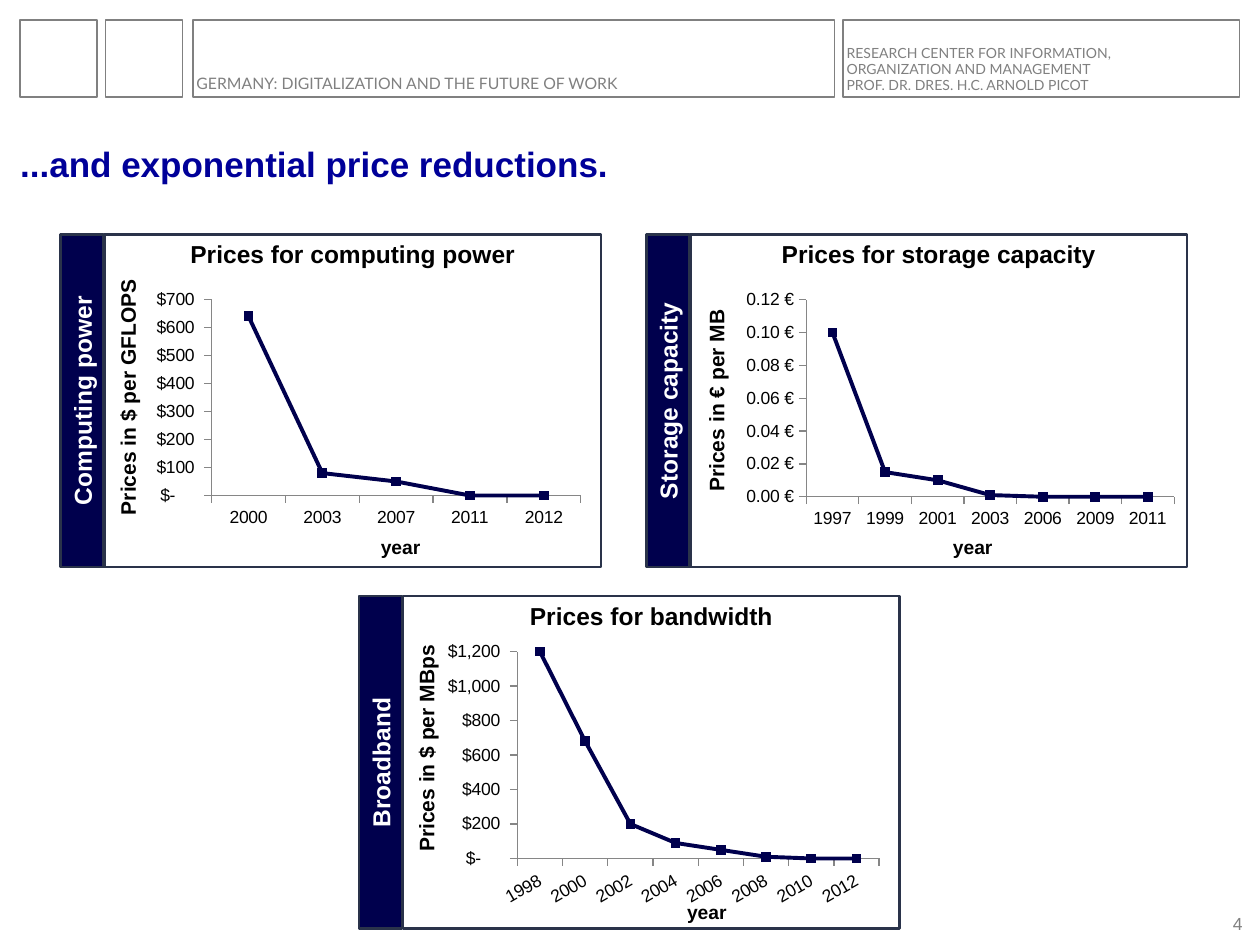
from copy import deepcopy

from pptx import Presentation
from pptx.chart.data import CategoryChartData
from pptx.dml.color import RGBColor
from pptx.enum.chart import XL_CHART_TYPE as ChartType, XL_MARKER_STYLE as Marker, XL_TICK_MARK as Tick
from pptx.enum.shapes import MSO_SHAPE as Shape
from pptx.enum.text import MSO_ANCHOR as Anchor, MSO_AUTO_SIZE as AutoSize, PP_ALIGN as Align
from pptx.oxml import parse_xml
from pptx.oxml.ns import nsdecls, qn
from pptx.util import Pt

THEME = {
    "font": "Arial", "header_font": "Lato",
    "grey": "808080", "axis": "868686", "navy": "00004D", "border": "2A334A",
    "title": "000099", "black": "000000", "white": "FFFFFF",
    "title_size": 20, "head_size": 14, "label_size": 12, "year_size": 11,
    "small_size": 10, "topic_size": 9, "center_size": 8,
}

TITLE = "...and exponential price reductions."
HEADER_BOXES = [(11.5, 44), (60.5, 44), (110.2, 366.5), (481.7, 226.8)]  # left, width
HEADER_TEXTS = [
    (["GERMANY: DIGITALIZATION AND THE FUTURE OF WORK"], "topic_size", 112.3, 332),
    (["RESEARCH CENTER FOR INFORMATION,\vORGANIZATION AND MANAGEMENT",
      "PROF. DR. DRES. H.C. ARNOLD PICOT"], "center_size", 483.8, 187.2),
]
PAGE_NUMBER = "4"

DOLLAR = '_-[$$-409]* #,##0_-;\\-[$$-409]* #,##0_-;_-[$$-409]* "-"??_-;_-@_-'
EURO = '#,##0.00\\ "€"'

# Positions "chart", "label" (centre) and "year" are relative to the frame;
# "plot" is the inner plot area as fractions of the chart.
PANELS = [
    {"band": "Computing power", "heading": "Prices for computing power",
     "label": "Prices in $ per GFLOPS", "format": DOLLAR, "max": 700, "unit": 100,
     "years": ["2000", "2003", "2007", "2011", "2012"], "prices": [640, 80, 50, 0, 0],
     "at": (59.8, 133.9), "chart": (23, 28.8, 254.2, 141.8), "label_at": (13, 93),
     "year_at": (141.8, 171.4), "plot": (0.15, 0.06, 0.83, 0.79), "turn": 0},
    {"band": "Storage capacity", "heading": "Prices for storage capacity",
     "label": "Prices in € per MB", "format": EURO, "max": 0.12, "unit": 0.02,
     "years": ["1997", "1999", "2001", "2003", "2006", "2009", "2011"],
     "prices": [0.1, 0.015, 0.01, 0.001, 0, 0, 0],
     "at": (394.6, 133.9), "chart": (28.1, 28.8, 253.4, 142.6), "label_at": (14.4, 95),
     "year_at": (133.9, 171.4), "plot": (0.15, 0.06, 0.83, 0.79), "turn": 0},
    {"band": "Broadband", "heading": "Prices for bandwidth",
     "label": "Prices in $ per MBps", "format": DOLLAR, "max": 1200, "unit": 200,
     "years": ["1998", "2000", "2002", "2004", "2006", "2008", "2010", "2012"],
     "prices": [1200, 680, 200, 90, 50, 10, 0, 0],
     "at": (230.4, 340.6), "chart": (18.7, 22.3, 258.5, 157.7), "label_at": (13, 87.1),
     "year_at": (146.2, 173.5), "plot": (0.18, 0.06, 0.8, 0.75), "turn": -30},
]
FRAME_WIDTH, FRAME_HEIGHT = 283.7, 190.1
BAND_WIDTH, BAND_SHIFT = 24.5, -12.9  # the shift is from the frame's left to the band's centre


def color(name):
    return RGBColor.from_string(THEME[name])


def write(frame, paragraphs, size, ink="black", font="font", bold=False,
          align=Align.LEFT, anchor=Anchor.BOTTOM, inset=0, spacing=None, wrap=True):
    frame.auto_size, frame.word_wrap, frame.vertical_anchor = AutoSize.NONE, wrap, anchor
    frame.margin_left = frame.margin_right = Pt(inset)
    frame.margin_top = frame.margin_bottom = Pt(inset)
    for index, text in enumerate(paragraphs):
        para = frame.add_paragraph() if index else frame.paragraphs[0]
        para.text, para.alignment, para.line_spacing = text, align, spacing
        for span in para.runs:
            span.font.name, span.font.size = THEME[font], Pt(THEME[size])
            span.font.bold, span.font.color.rgb = bold, color(ink)
        for line_break in para._p.findall(qn("a:br")):
            line_break.append(deepcopy(para.runs[0]._r.rPr))


def add_box(page, left, top, width, height, line, weight, fill=None):
    box = page.shapes.add_shape(Shape.RECTANGLE, Pt(left), Pt(top), Pt(width), Pt(height))
    box.shadow.inherit = False
    box.line.color.rgb, box.line.width = color(line), Pt(weight)
    if fill:
        box.fill.solid()
        box.fill.fore_color.rgb = color(fill)
    else:
        box.fill.background()
    return box


def add_text(page, left, top, width, height, paragraphs, size, **style):
    box = page.shapes.add_textbox(Pt(left), Pt(top), Pt(width), Pt(height))
    write(box.text_frame, paragraphs, size, **style)
    return box


def place_plot(chart, plot):
    """Fix the inner plot area and make the chart background transparent."""
    area = chart._chartSpace.chart.plotArea
    for old in area.findall(qn("c:layout")):
        area.remove(old)
    sides = "".join(f'<c:{tag} val="{value}"/>' for tag, value in zip("xywh", plot))
    area.insert(0, parse_xml(
        f'<c:layout {nsdecls("c")}><c:manualLayout><c:layoutTarget val="inner"/>'
        f'<c:xMode val="edge"/><c:yMode val="edge"/>{sides}</c:manualLayout></c:layout>'))
    chart._chartSpace.chart.addnext(parse_xml(
        f'<c:spPr {nsdecls("c", "a")}><a:noFill/><a:ln><a:noFill/></a:ln></c:spPr>'))


def add_price_chart(page, panel, left, top, width, height):
    data = CategoryChartData()
    data.categories = panel["years"]
    data.add_series("Series 1", panel["prices"])
    chart = page.shapes.add_chart(ChartType.LINE_MARKERS, Pt(left), Pt(top),
                                  Pt(width), Pt(height), data).chart
    chart.has_legend = chart.has_title = False
    chart.font.name, chart.font.size = THEME["font"], Pt(THEME["small_size"])
    chart.font.color.rgb = color("black")
    place_plot(chart, panel["plot"])

    for axis in (chart.category_axis, chart.value_axis):
        axis.has_major_gridlines = False
        axis.major_tick_mark, axis.minor_tick_mark = Tick.OUTSIDE, Tick.NONE
        axis.format.line.color.rgb, axis.format.line.width = color("axis"), Pt(0.75)
    values = chart.value_axis
    values.minimum_scale, values.maximum_scale = 0, panel["max"]
    values.major_unit = panel["unit"]
    values.tick_labels.number_format = panel["format"]
    values.tick_labels.number_format_is_linked = False
    if panel["turn"]:
        chart.category_axis.tick_labels.font.size = Pt(THEME["small_size"])
        body = chart.category_axis._element.find(qn("c:txPr")).find(qn("a:bodyPr"))
        body.set("rot", str(panel["turn"] * 60000))

    chart.plots[0].vary_by_categories = False
    series = chart.plots[0].series[0]
    series.smooth = False
    series.format.line.color.rgb, series.format.line.width = color("navy"), Pt(2.25)
    series.marker.style, series.marker.size = Marker.SQUARE, 5
    series.marker.format.fill.solid()
    series.marker.format.fill.fore_color.rgb = color("navy")
    series.marker.format.line.color.rgb = color("navy")


def add_panel(page, panel):
    left, top = panel["at"]
    frame = add_box(page, left, top, FRAME_WIDTH, FRAME_HEIGHT, "border", 1.5, "white")
    write(frame.text_frame, [panel["heading"]], "head_size", bold=True,
          align=Align.CENTER, anchor=Anchor.TOP, inset=2.9)

    band = add_box(page, left + BAND_SHIFT - FRAME_HEIGHT / 2,
                   top + (FRAME_HEIGHT - BAND_WIDTH) / 2,
                   FRAME_HEIGHT, BAND_WIDTH, "border", 1.5, "navy")
    band.rotation = 270
    write(band.text_frame, [panel["band"]], "head_size", ink="white", bold=True,
          align=Align.CENTER, anchor=Anchor.MIDDLE, inset=3.6)

    center_x, center_y = panel["label_at"]
    label = add_text(page, left + center_x - 75, top + center_y - 10, 150, 20,
                     [panel["label"]], "label_size", bold=True, align=Align.CENTER,
                     anchor=Anchor.TOP, inset=2.9, wrap=False)
    label.rotation = 270

    year_x, year_y = panel["year_at"]
    add_text(page, left + year_x, top + year_y, 54.7, 13.7, ["year"], "year_size",
             bold=True, align=Align.CENTER)
    x, y, width, height = panel["chart"]
    add_price_chart(page, panel, left + x, top + y, width, height)


def main():
    deck = Presentation()
    deck.slide_width, deck.slide_height = Pt(720), Pt(540)
    page = deck.slides.add_slide(deck.slide_layouts[5])

    title = page.shapes.title
    title.left, title.top, title.width, title.height = Pt(11.5), Pt(63.4), Pt(697), Pt(41.8)
    write(title.text_frame, [TITLE], "title_size", ink="title", bold=True)

    for left, width in HEADER_BOXES:
        add_box(page, left, 11.5, width, 44, "grey", 0.75)
    for paragraphs, size, left, width in HEADER_TEXTS:
        add_text(page, left, 20.2, width, 33.1, paragraphs, size, ink="grey",
                 font="header_font", spacing=0.95)
    for panel in PANELS:
        add_panel(page, panel)
    add_text(page, 689.8, 521.3, 20.2, 12.2, [PAGE_NUMBER], "small_size", ink="grey",
             align=Align.RIGHT, wrap=False)
    deck.save("out.pptx")


if __name__ == "__main__":
    main()
